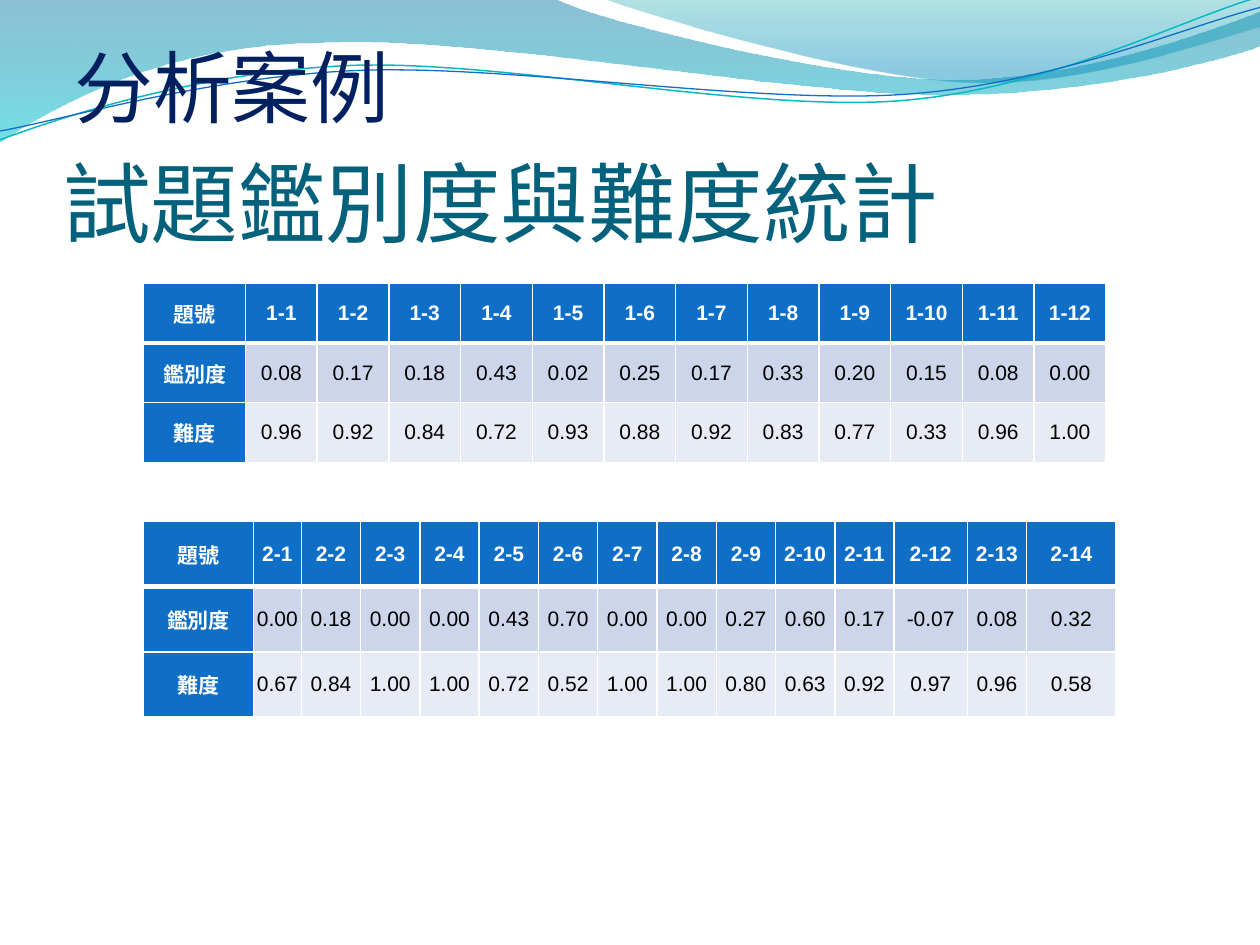
"""Build a slide with two tables of item discrimination and difficulty."""
import math
import pptx
import pptx.dml.color
import pptx.enum.text
import pptx.oxml
import pptx.oxml.ns
import pptx.util

TITLE = "試題鑑別度與難度統計"
LABEL = "分析案例"
HEADS = ("題號", "鑑別度", "難度")
TABLES = [
    {"top": 2.25, "high": 1.42, "wide": 7.64, "part": 1,
     "cols": [0.81] + [0.57] * 12,
     "power": "0.08 0.17 0.18 0.43 0.02 0.25 0.17 0.33 0.20 0.15 0.08 0.00",
     "ease": "0.96 0.92 0.84 0.72 0.93 0.88 0.92 0.83 0.77 0.33 0.96 1.00"},
    {"top": 4.14, "high": 1.55, "wide": 7.72, "part": 2,
     "cols": [0.87, 0.38] + [0.47] * 10 + [0.58, 0.47, 0.71],
     "power": "0.00 0.18 0.00 0.00 0.43 0.70 0.00 0.00 0.27 0.60 0.17 -0.07 0.08 0.32",
     "ease": "0.67 0.84 1.00 1.00 0.72 0.52 1.00 1.00 0.80 0.63 0.92 0.97 0.96 0.58"},
]
BANDS = [
    {"path": [(0, -0.01), (4.4, -0.01), (4.76, 0.17, 6.64, 0.63, 7.58, 0.63),
              (8.53, 0.63, 9.58, 0.26, 10, 0.09), (10.01, 0.36),
              (9.83, 0.44, 8.7, 0.76, 7.46, 0.75),
              (6.22, 0.75, 3.82, 0.28, 2.57, 0.34),
              (1.29, 0.35, 0.46, 0.83, -0.01, 1.13), (0, -0.01)],
     "stops": [(0, "0074A1", 45), (1, "00C6CF", 55)]},
    {"path": [(4.79, -0.01), (5.09, 0.11, 6.82, 0.62, 7.69, 0.65),
              (8.56, 0.69, 9.61, 0.32, 10, 0.21), (10, 0), (4.79, -0.01)],
     "stops": [(0, "00A1A9", 30), (0.8, "008BBF", 45)]},
]
LINES = [
    {"path": [(0, 1.11), (0.48, 0.93, 1.58, 0.57, 2.77, 0.52),
              (3.95, 0.47, 5.93, 0.89, 7.13, 0.8),
              (8.33, 0.71, 9.38, 0.15, 9.98, -0.02)],
     "mid": (4.99, 0.58), "color": "0AB8BF", "width": 0.85},
    {"path": [(0, 1.04), (0.47, 0.96, 1.64, 0.61, 2.83, 0.56),
              (4.03, 0.51, 5.97, 0.83, 7.17, 0.75),
              (8.36, 0.67, 9.41, 0.21, 10, 0.06)],
     "mid": (5, 0.59), "color": "0F6FC6", "width": 0.75},
]
THEME = {
    "title": {"size": 50, "name": "Calibri", "color": "04617B", "bold": False},
    "label": {"size": 45, "name": "Calibri", "color": "002060", "bold": False},
    "head": {"size": 12, "name": "Arial", "color": "FFFFFF", "bold": True},
    "body": {"size": 12, "name": "Arial", "color": "000000", "bold": False},
    "fills": ("0F6FC6", "CCD5EA", "E7EBF5"), "rule": "FFFFFF",
}
LEFT, PAD, TILT = 1.14, 0.02, 357.3
ALIGN = pptx.enum.text.PP_ALIGN
ANCHOR = pptx.enum.text.MSO_ANCHOR
RGB = pptx.dml.color.RGBColor.from_string
QN, NS = pptx.oxml.ns.qn, pptx.oxml.ns.nsdecls("a")

prs = pptx.Presentation()
prs.slide_width, prs.slide_height = pptx.util.Inches(10), pptx.util.Inches(7.5)
UNIT = prs.slide_width / 10


def grid(*nums):
    """Turn grid units into slide lengths."""
    return [pptx.util.Emu(round(num * UNIT)) for num in nums]


def apply(item, values):
    """Set each named attribute of an item."""
    for key, value in values.items():
        setattr(item, key, value)


def write(frame, text, style, align=ALIGN.LEFT):
    """Put one styled paragraph in a text frame."""
    para = frame.paragraphs[0]
    para.alignment = align
    run = para.add_run()
    run.text = text
    look = THEME[style]
    apply(run.font, {"size": pptx.util.Pt(look["size"]),
                     "name": look["name"], "bold": look["bold"]})
    run.font.color.rgb = RGB(look["color"])


def level(path, mid):
    """Turn a tilted path back to level about its middle."""
    turn = math.radians(360 - TILT)
    cos, sin = math.cos(turn), math.sin(turn)
    flat = []
    for part in path:
        pairs = [(x - mid[0], y - mid[1]) for x, y in zip(part[::2], part[1::2])]
        flat.append(tuple(num for x, y in pairs for num in (
            mid[0] + x * cos - y * sin, mid[1] + x * sin + y * cos)))
    return flat


def draw(shapes, path, close):
    """Draw a path of lines and cubic curves as a freeform."""
    dots = [grid(*part[i:i + 2]) for part in path for i in range(0, len(part), 2)]
    pen = shapes.build_freeform(*dots[0], scale=1.0)
    pen.add_line_segments(dots[1:], close=close)
    shape = pen.convert_to_shape()
    shape.shadow.inherit = False
    nodes = iter(list(shape.element.iter(QN("a:lnTo"))))
    for part in path[1:]:
        first = next(nodes)
        if len(part) == 6:
            first.tag = QN("a:cubicBezTo")
            for node in (next(nodes), next(nodes)):
                first.append(node[0])
                node.getparent().remove(node)
    return shape


def shade(shape, stops):
    """Fill a shape from top to bottom with translucent colours."""
    shape.line.fill.background()
    shape.fill.gradient()
    shape.fill.gradient_angle = 270
    for stop, (place, color, alpha) in zip(shape.fill.gradient_stops, stops):
        stop.position = place
        stop.color.rgb = RGB(color)
    marks = shape.element.iter(QN("a:srgbClr"))
    for mark, (place, color, alpha) in zip(marks, stops):
        mark.append(pptx.oxml.parse_xml(f'<a:alpha {NS} val="{alpha * 1000}"/>'))


def edge(cell, row):
    """Give a cell white borders, thick under the header row."""
    widths = {"L": 1, "R": 1, "T": 3 if row == 1 else 1, "B": 3 if row == 0 else 1}
    props = cell._tc.get_or_add_tcPr()
    for spot, (side, width) in enumerate(widths.items()):
        props.insert(spot, pptx.oxml.parse_xml(
            f'<a:ln{side} {NS} w="{width * 12700}"><a:solidFill>'
            f'<a:srgbClr val="{THEME["rule"]}"/></a:solidFill></a:ln{side}>'))


def tabulate(shapes, data):
    """Add one table of item numbers and their two measures."""
    cols = data["cols"]
    names = [f'{data["part"]}-{num}' for num in range(1, len(cols))]
    rows = [names, data["power"].split(), data["ease"].split()]
    table = shapes.add_table(len(rows), len(cols), *grid(
        LEFT, data["top"], data["wide"], data["high"])).table
    ratio = data["wide"] / sum(cols)
    for col, width in zip(table.columns, cols):
        col.width = grid(width * ratio)[0]
    pad = grid(PAD)[0]
    for r, (head, values) in enumerate(zip(HEADS, rows)):
        table.rows[r].height = grid(data["high"] / len(rows))[0]
        for c, text in enumerate([head] + values):
            cell = table.cell(r, c)
            top = r == 0 or c == 0
            apply(cell, {"margin_left": pad, "margin_right": pad, "margin_top": 0,
                         "margin_bottom": 0, "vertical_anchor": ANCHOR.MIDDLE})
            cell.fill.solid()
            cell.fill.fore_color.rgb = RGB(THEME["fills"][0 if top else r])
            edge(cell, r)
            write(cell.text_frame, text, "head" if top else "body", ALIGN.CENTER)


def caption(shape, text, style, box):
    """Place a heading and set its text at the foot of its box."""
    apply(shape, dict(zip(("left", "top", "width", "height"), grid(*box))))
    apply(shape.text_frame, {
        "word_wrap": True, "vertical_anchor": ANCHOR.BOTTOM, "margin_left": 0,
        "margin_right": 0, "margin_top": grid(0.05)[0], "margin_bottom": 0,
        "auto_size": pptx.enum.text.MSO_AUTO_SIZE.NONE})
    write(shape.text_frame, text, style)


def main():
    """Compose and save the slide."""
    slide = prs.slides.add_slide(prs.slide_layouts[5])
    shapes = slide.shapes
    for band in BANDS:
        shade(draw(shapes, band["path"], True), band["stops"])
    group = shapes.add_group_shape()
    for wave in LINES:
        shape = draw(group.shapes, level(wave["path"], wave["mid"]), False)
        shape.rotation = TILT
        shape.fill.background()
        shape.line.color.rgb = RGB(wave["color"])
        shape.line.width = pptx.util.Pt(wave["width"])
    group.element.addnext(shapes.title.element)
    caption(shapes.title, TITLE, "title", (0.5, 0.77, 9, 1.25))
    tabulate(shapes, TABLES[0])
    label = shapes.add_textbox(0, 0, 0, 0)
    caption(label, LABEL, "label", (0.59, 0.36, 2.83, 0.7))
    tabulate(shapes, TABLES[1])
    prs.save("out.pptx")


if __name__ == "__main__":
    main()
